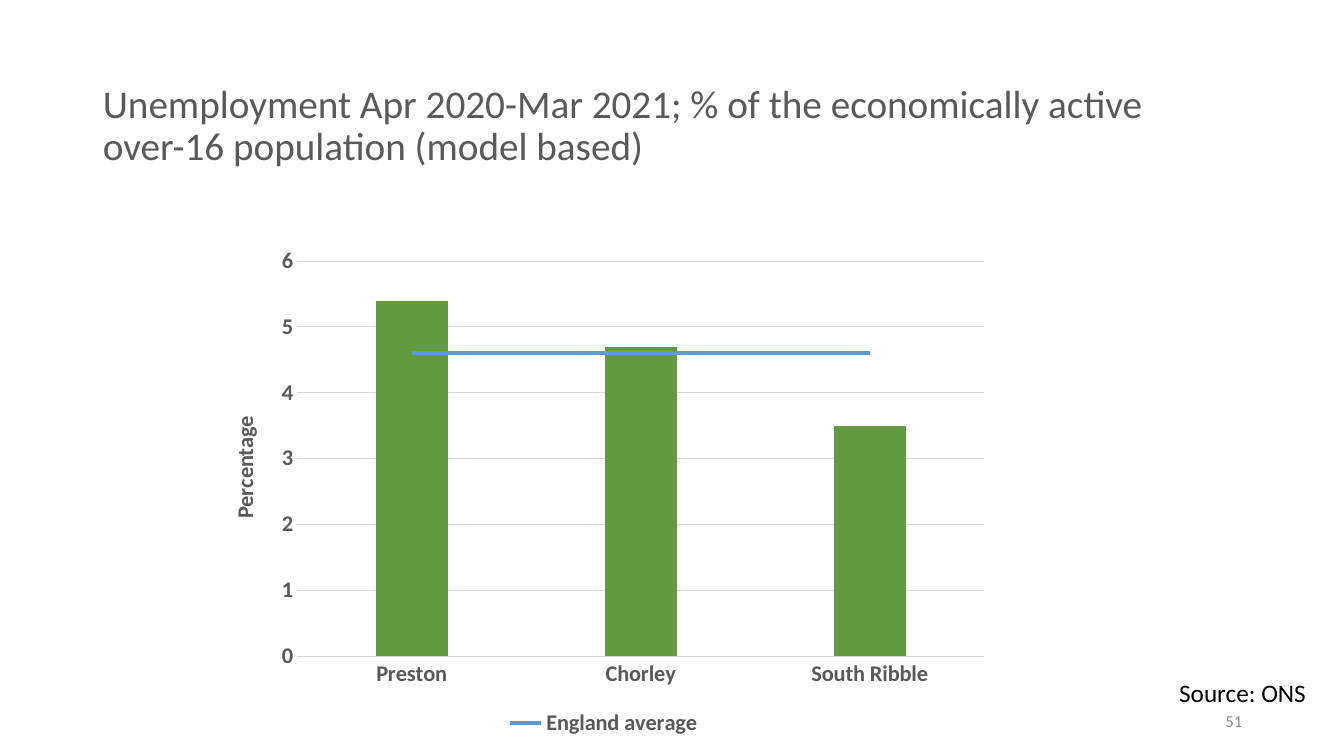
from lxml import etree
from pptx import Presentation
from pptx.chart.data import CategoryChartData
from pptx.dml.color import RGBColor
from pptx.enum.chart import XL_CHART_TYPE, XL_LEGEND_POSITION, XL_MARKER_STYLE, XL_TICK_MARK
from pptx.enum.text import MSO_ANCHOR, PP_ALIGN
from pptx.oxml import parse_xml
from pptx.oxml.ns import nsdecls, qn
from pptx.util import Inches, Pt

COLUMNS = XL_CHART_TYPE.COLUMN_CLUSTERED
BOTTOM = XL_LEGEND_POSITION.BOTTOM
NO_MARKER = XL_MARKER_STYLE.NONE
NO_TICK = XL_TICK_MARK.NONE
MIDDLE = MSO_ANCHOR.MIDDLE
TOP = MSO_ANCHOR.TOP
LEFT = PP_ALIGN.LEFT
RIGHT = PP_ALIGN.RIGHT

FONT = "Calibri"
COLORS = {
    "text": "595959",
    "number": "8C8C8C",
    "source": "000000",
    "grid": "D9D9D9",
    "bar": "639A3F",
    "average": "5B9BD5",
}


class SlideBuilder:
    def __init__(self, deck):
        self.slide = deck.slides.add_slide(deck.slide_layouts[5])

    def color(self, name):
        return RGBColor.from_string(COLORS[name])

    def style_font(self, font, size, color, bold=False):
        font.name = FONT
        font.size = Pt(size)
        font.bold = bold
        font.color.rgb = self.color(color)

    def style_line(self, line, color, width):
        line.color.rgb = self.color(color)
        line.width = Pt(width)

    def fill_text(self, box, text, size, color, align, anchor):
        frame = box.text_frame
        frame.word_wrap = True
        frame.vertical_anchor = anchor
        frame.text = text
        para = frame.paragraphs[0]
        para.alignment = align
        self.style_font(para.runs[0].font, size, color)
        return para

    def title(self, text, left, top, width, height):
        box = self.slide.shapes.title
        box.left, box.top = Inches(left), Inches(top)
        box.width, box.height = Inches(width), Inches(height)
        para = self.fill_text(box, text, 28, "text", LEFT, MIDDLE)
        para.line_spacing = 0.9

    def label(self, text, left, top, width, height, size, color, anchor):
        box = self.slide.shapes.add_textbox(
            Inches(left), Inches(top), Inches(width), Inches(height))
        self.fill_text(box, text, size, color, RIGHT, anchor)

    def combo_chart(self, categories, bars, average, axis_title, left, top, width, height):
        data = CategoryChartData()
        data.categories = categories
        for name, values in (bars, average):
            data.add_series(name, values)
        chart = self.slide.shapes.add_chart(
            COLUMNS, Inches(left), Inches(top), Inches(width), Inches(height), data).chart
        chart.has_title = False
        self.style_font(chart.font, 16, "text", True)
        self.move_last_series_to_line(chart)

        columns, line = chart.plots
        columns.gap_width = 219
        columns.vary_by_categories = False
        fill = columns.series[0].format.fill
        fill.solid()
        fill.fore_color.rgb = self.color("bar")
        average_series = line.series[0]
        average_series.smooth = False
        average_series.marker.style = NO_MARKER
        self.style_line(average_series.format.line, "average", 3)

        self.style_axes(chart, axis_title)
        self.style_legend(chart)
        self.place_plot(chart, x=0.114, y=0.048, w=0.866, h=0.784)

    def move_last_series_to_line(self, chart):
        bar_plot = chart.plots[0]._element
        series = bar_plot.findall(qn("c:ser"))[-1]
        for bar_setting in series.findall(qn("c:invertIfNegative")):
            series.remove(bar_setting)
        line_plot = parse_xml(
            f'<c:lineChart {nsdecls("c")}><c:grouping val="standard"/>'
            '<c:varyColors val="0"/><c:marker val="1"/></c:lineChart>')
        line_plot.insert(2, series)
        for axis_id in bar_plot.findall(qn("c:axId")):
            etree.SubElement(line_plot, qn("c:axId"), val=axis_id.get("val"))
        bar_plot.addnext(line_plot)

    def style_axes(self, chart, axis_title):
        for axis in (chart.category_axis, chart.value_axis):
            axis.major_tick_mark = NO_TICK
            axis.minor_tick_mark = NO_TICK
            self.style_font(axis.tick_labels.font, 16, "text", True)
        self.style_line(chart.category_axis.format.line, "grid", 0.75)
        values = chart.value_axis
        values.minimum_scale, values.maximum_scale, values.major_unit = 0, 6, 1
        values.format.line.fill.background()
        values.has_major_gridlines = True
        self.style_line(values.major_gridlines.format.line, "grid", 0.75)
        frame = values.axis_title.text_frame
        frame.text = axis_title
        self.style_font(frame.paragraphs[0].runs[0].font, 16, "text", True)

    def style_legend(self, chart):
        chart.has_legend = True
        legend = chart.legend
        legend.position = BOTTOM
        legend.include_in_layout = False
        self.style_font(legend.font, 16, "text", True)
        hidden_entry = parse_xml(
            f'<c:legendEntry {nsdecls("c")}><c:idx val="0"/><c:delete val="1"/></c:legendEntry>')
        position = legend._element.find(qn("c:legendPos"))
        legend._element.insert(0 if position is None else 1, hidden_entry)

    def place_plot(self, chart, **fractions):
        plot_area = chart._chartSpace.chart.plotArea
        for old_layout in plot_area.findall(qn("c:layout")):
            plot_area.remove(old_layout)
        layout = parse_xml(
            f'<c:layout {nsdecls("c")}><c:manualLayout><c:layoutTarget val="inner"/>'
            '<c:xMode val="edge"/><c:yMode val="edge"/></c:manualLayout></c:layout>')
        for name, value in fractions.items():
            etree.SubElement(layout[0], qn(f"c:{name}"), val=str(value))
        plot_area.insert(0, layout)


def main():
    deck = Presentation()
    deck.slide_width, deck.slide_height = Inches(13.33), Inches(7.5)
    page = SlideBuilder(deck)
    page.title(
        "Unemployment Apr 2020-Mar 2021; % of the economically active "
        "over-16 population (model based)", 0.92, 0.72, 11.5, 1.08)
    page.label("51", 9.42, 6.95, 3, 0.4, 12, "number", MIDDLE)
    page.combo_chart(
        ["Preston", "Chorley", "South Ribble"],
        ("Series 1", [5.4, 4.7, 3.5]),
        ("England average", [4.6] * 3),
        "Percentage", 2.05, 2.35, 7.87, 5)
    page.label("Source: ONS", 11.16, 6.67, 1.89, 0.4, 18, "source", TOP)
    deck.save("out.pptx")


if __name__ == "__main__":
    main()
